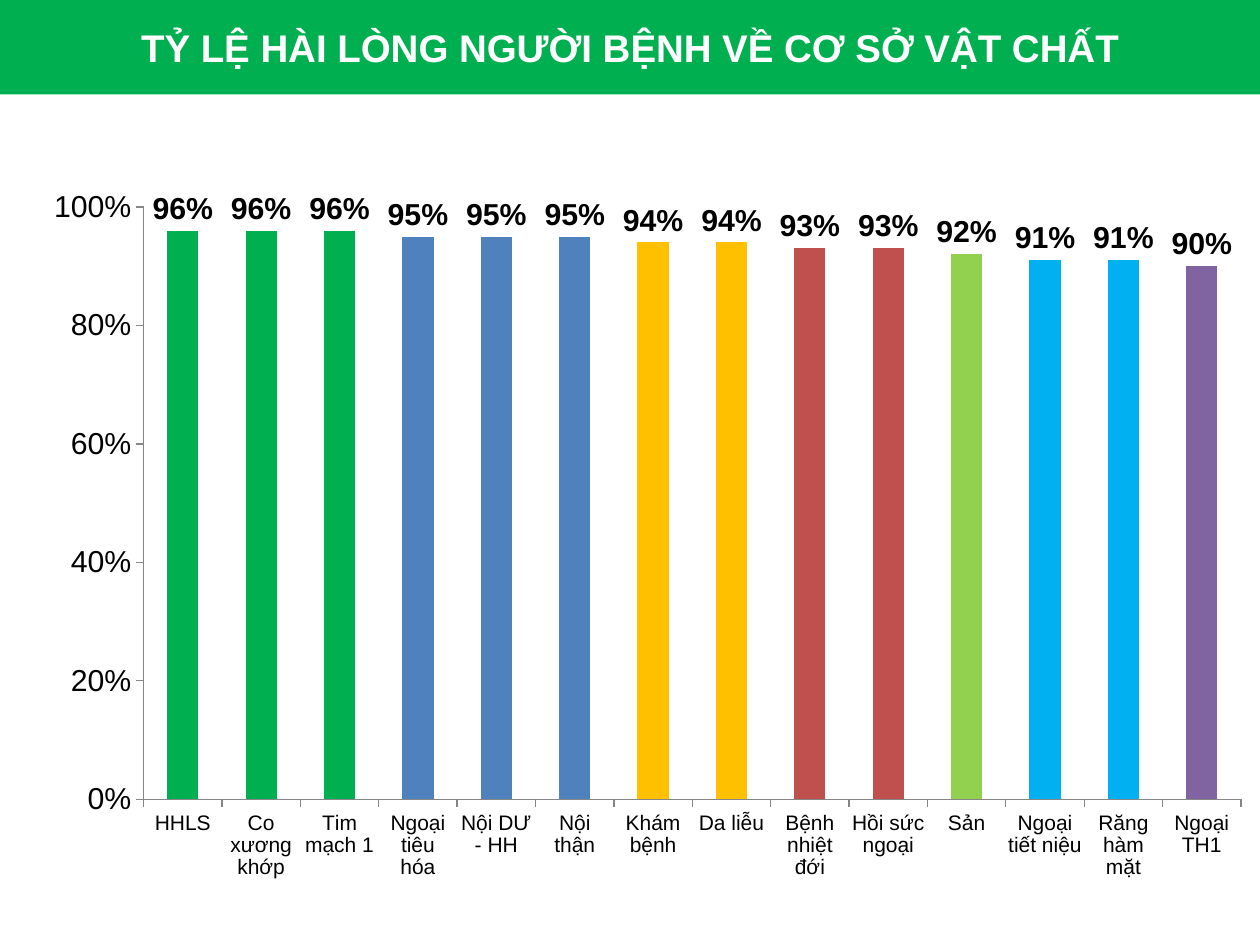
"""Build the slide on patient satisfaction with hospital facilities."""
from lxml import etree
from pptx import Presentation
from pptx import util as u
from pptx.chart import data
from pptx.dml import color
from pptx.enum import chart as ch, text
from pptx.oxml import ns

COLORS = {
    "green": "00B050", "blue": "4F81BD", "amber": "FFC000", "red": "C0504D",
    "lime": "92D050", "sky": "00B0F0", "purple": "8064A2",
    "white": "FFFFFF", "black": "000000", "axis": "868686",
}
DEPARTMENTS = [
    ("HHLS", 0.96, "green"), ("Co xương khớp", 0.96, "green"),
    ("Tim mạch 1", 0.96, "green"), ("Ngoại tiêu hóa", 0.95, "blue"),
    ("Nội DƯ - HH", 0.95, "blue"), ("Nội thận", 0.95, "blue"),
    ("Khám bệnh", 0.94, "amber"), ("Da liễu", 0.94, "amber"),
    ("Bệnh nhiệt đới", 0.93, "red"), ("Hồi sức ngoại", 0.93, "red"),
    ("Sản", 0.92, "lime"), ("Ngoại tiết niệu", 0.91, "sky"),
    ("Răng hàm mặt", 0.91, "sky"), ("Ngoại TH1", 0.9, "purple"),
]


def rgb(name):
    return color.RGBColor.from_string(COLORS[name])


def style_font(font, size, ink, bold=False):
    font.name = "Arial"
    font.size = u.Pt(size)
    font.bold = bold
    font.color.rgb = rgb(ink)


prs = Presentation()
prs.slide_width, prs.slide_height = u.Inches(10), u.Inches(7.5)
slide = prs.slides.add_slide(prs.slide_layouts[5])

title = slide.shapes.title
title.left, title.top = u.Inches(0), u.Inches(0)
title.width, title.height = u.Inches(10), u.Inches(0.75)
title.fill.solid()
title.fill.fore_color.rgb = rgb("green")
title.text_frame.text = "TỶ LỆ HÀI LÒNG NGƯỜI BỆNH VỀ CƠ SỞ VẬT CHẤT"
title.text_frame.vertical_anchor = text.MSO_ANCHOR.MIDDLE
heading = title.text_frame.paragraphs[0]
heading.alignment = text.PP_ALIGN.CENTER
style_font(heading.runs[0].font, 22, "white", True)

satisfaction = data.CategoryChartData(number_format="0%")
satisfaction.categories = [name for name, _, _ in DEPARTMENTS]
satisfaction.add_series("Series 1", [rate for _, rate, _ in DEPARTMENTS])
chart = slide.shapes.add_chart(
    ch.XL_CHART_TYPE.COLUMN_CLUSTERED, u.Inches(0), u.Inches(1.23),
    u.Inches(10), u.Inches(5.9), satisfaction).chart
chart.has_legend = False
chart.has_title = False
style_font(chart.font, 17.3, "black")

plot = chart.plots[0]
plot.gap_width = 150
plot.vary_by_categories = False
rates = plot.series[0]
rates.format.fill.solid()
rates.format.fill.fore_color.rgb = rgb("blue")
for index, (_, _, hue) in enumerate(DEPARTMENTS):
    bar_fill = rates.points[index].format.fill
    bar_fill.solid()
    bar_fill.fore_color.rgb = rgb(hue)

labels = rates.data_labels
labels.show_value = True
labels.number_format = "0%"
labels.number_format_is_linked = False
labels.position = ch.XL_LABEL_POSITION.OUTSIDE_END
style_font(labels.font, 17.3, "black", True)

for axis, size in ((chart.category_axis, 12), (chart.value_axis, 17.3)):
    axis.has_major_gridlines = False
    axis.major_tick_mark = ch.XL_TICK_MARK.OUTSIDE
    axis.minor_tick_mark = ch.XL_TICK_MARK.NONE
    axis.format.line.color.rgb = rgb("axis")
    axis.format.line.width = u.Pt(0.75)
    style_font(axis.tick_labels.font, size, "black")
scale = chart.value_axis
scale.minimum_scale, scale.maximum_scale, scale.major_unit = 0, 1, 0.2
scale.tick_labels.number_format = "0%"
scale.tick_labels.number_format_is_linked = False

plot_area = chart.element.find(".//" + ns.qn("c:plotArea"))
for old_layout in plot_area.findall(ns.qn("c:layout")):
    plot_area.remove(old_layout)
layout = etree.Element(ns.qn("c:layout"))
plot_area.insert(0, layout)
manual = etree.SubElement(layout, ns.qn("c:manualLayout"))
for tag, value in (("layoutTarget", "inner"), ("xMode", "edge"),
                   ("yMode", "edge"), ("x", "0.114"), ("y", "0.07"),
                   ("w", "0.871"), ("h", "0.797")):
    etree.SubElement(manual, ns.qn("c:" + tag)).set("val", value)

prs.save("out.pptx")
